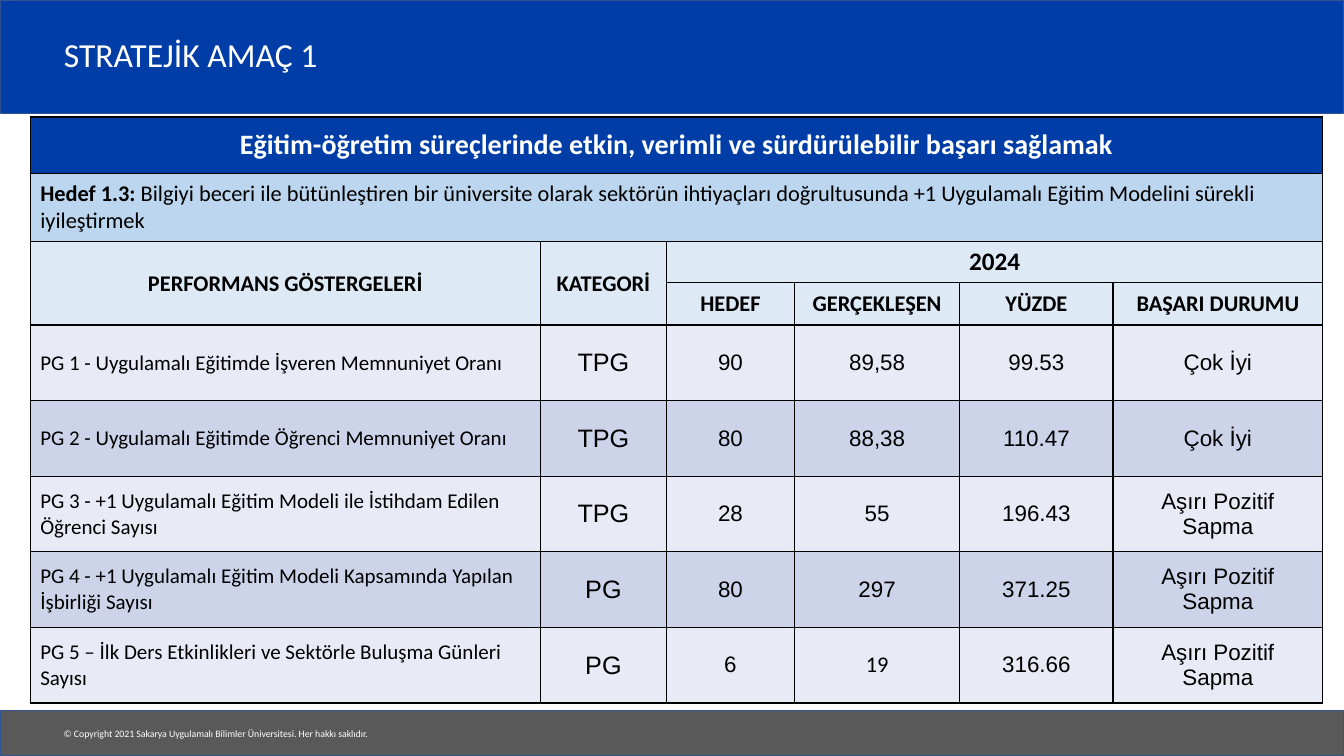
from lxml.etree import SubElement
from pptx import Presentation
from pptx.dml.color import RGBColor
from pptx.enum.shapes import MSO_SHAPE
from pptx.enum.text import MSO_ANCHOR, PP_ALIGN
from pptx.oxml.ns import qn
from pptx.util import Inches, Pt

WIDTH, HEIGHT = 13.33, 7.5
NAVY, GREY, OUTLINE = "003DA6", "595959", "31538F"
WHITE, BLACK = "FFFFFF", "000000"
GOAL_FILL, HEAD_FILL = "BBD6EE", "DDEAF6"
BANDS = ("E8EBF5", "CDD4EA")
COLUMNS = (5.06, 1.25, 1.27, 1.64, 1.52, 2.08)
ROWS = (0.56, 0.68, 0.4, 0.42) + (0.75,) * 5
MEASURES = ("HEDEF", "GERÇEKLEŞEN", "YÜZDE", "BAŞARI DURUMU")
INDICATORS = (
    ("PG 1 - Uygulamalı Eğitimde İşveren Memnuniyet Oranı",
     "TPG", "90", "89,58", "99.53", "Çok İyi"),
    ("PG 2 - Uygulamalı Eğitimde Öğrenci Memnuniyet Oranı",
     "TPG", "80", "88,38", "110.47", "Çok İyi"),
    ("PG 3 - +1 Uygulamalı Eğitim Modeli ile İstihdam Edilen Öğrenci Sayısı",
     "TPG", "28", "55", "196.43", "Aşırı Pozitif Sapma"),
    ("PG 4 - +1 Uygulamalı Eğitim Modeli Kapsamında Yapılan İşbirliği Sayısı",
     "PG", "80", "297", "371.25", "Aşırı Pozitif Sapma"),
    ("PG 5 – İlk Ders Etkinlikleri ve Sektörle Buluşma Günleri Sayısı",
     "PG", "6", "19", "316.66", "Aşırı Pozitif Sapma"),
)


def color(code):
    """Turn a hex string into a colour."""
    return RGBColor.from_string(code)


def write(frame, text, size=16, ink=BLACK, bold=False, font="Calibri",
          align=PP_ALIGN.LEFT, lead=""):
    """Write one paragraph, with an optional bold lead-in."""
    para = frame.paragraphs[0]
    para.alignment = align
    for words, heavy in ((lead, True), (text, bold)):
        if words:
            span = para.add_run()
            span.text = words
            span.font.name = font
            span.font.size = Pt(size)
            span.font.bold = heavy
            span.font.color.rgb = color(ink)


def add_bar(page, top, height, fill):
    """Add a full-width bar at shares of the slide height."""
    bar = page.shapes.add_shape(
        MSO_SHAPE.RECTANGLE, 0, Inches(top * HEIGHT),
        Inches(WIDTH), Inches(height * HEIGHT))
    bar.shadow.inherit = False
    bar.fill.solid()
    bar.fill.fore_color.rgb = color(fill)
    bar.line.color.rgb = color(OUTLINE)
    bar.line.width = Pt(1)


def add_title(page, text):
    """Format the title placeholder and bring it above the bar."""
    title = page.shapes.title
    title.left, title.top = Inches(0.04 * WIDTH), Inches(0.025 * HEIGHT)
    title.width, title.height = Inches(0.83 * WIDTH), Inches(0.1 * HEIGHT)
    title.text_frame.vertical_anchor = MSO_ANCHOR.MIDDLE
    write(title.text_frame, text, size=24, ink=WHITE)
    title.text_frame.paragraphs[0].line_spacing = 0.9
    page.shapes.element.append(title.element)


def add_copyright(page, text):
    """Add the copyright line on the bottom bar."""
    box = page.shapes.add_textbox(
        Inches(0.04 * WIDTH), Inches(0.956 * HEIGHT),
        Inches(0.25 * WIDTH), Inches(0.03 * HEIGHT))
    box.text_frame.word_wrap = True
    write(box.text_frame, text, size=7, ink=WHITE)


def dress(cell, fill):
    """Give a cell thin black borders, a fill and centred height."""
    properties = cell._tc.get_or_add_tcPr()
    for side in ("a:lnL", "a:lnR", "a:lnT", "a:lnB"):
        border = SubElement(properties, qn(side), w=str(Pt(1)))
        solid = SubElement(border, qn("a:solidFill"))
        SubElement(solid, qn("a:srgbClr"), val=BLACK)
    cell.fill.solid()
    cell.fill.fore_color.rgb = color(fill)
    cell.vertical_anchor = MSO_ANCHOR.MIDDLE


def add_grid(page):
    """Add the table with its bordered cells and merged headings."""
    table = page.shapes.add_table(
        len(ROWS), len(COLUMNS), Inches(0.3), Inches(1.16),
        Inches(sum(COLUMNS)), Inches(sum(ROWS))).table
    table.first_row = table.horz_banding = False
    for column, width in zip(table.columns, COLUMNS):
        column.width = Inches(width)
    fills = (NAVY, GOAL_FILL, HEAD_FILL, HEAD_FILL)
    for index, (row, height) in enumerate(zip(table.rows, ROWS)):
        row.height = Inches(height)
        for cell in row.cells:
            dress(cell, fills[index] if index < len(fills) else BANDS[index % 2])
    for first, last in (((0, 0), (0, 5)), ((1, 0), (1, 5)), ((2, 0), (3, 0)),
                        ((2, 1), (3, 1)), ((2, 2), (2, 5))):
        table.cell(*first).merge(table.cell(*last))
    return table


def fill_headings(table):
    """Write the aim, the goal and the column headings."""
    write(table.cell(0, 0).text_frame,
          "Eğitim-öğretim süreçlerinde etkin, verimli ve sürdürülebilir başarı sağlamak",
          size=20, ink=WHITE, bold=True, align=PP_ALIGN.CENTER)
    write(table.cell(1, 0).text_frame,
          "Bilgiyi beceri ile bütünleştiren bir üniversite olarak sektörün ihtiyaçları "
          "doğrultusunda +1 Uygulamalı Eğitim Modelini sürekli iyileştirmek",
          lead="Hedef 1.3: ")
    headings = [(2, 0, "PERFORMANS GÖSTERGELERİ", 16), (2, 1, "KATEGORİ", 16),
                (2, 2, "2024", 18)]
    headings += [(3, column, text, 16) for column, text in enumerate(MEASURES, 2)]
    for row, column, text, size in headings:
        write(table.cell(row, column).text_frame, text, size=size, bold=True,
              align=PP_ALIGN.CENTER)


def fill_indicators(table):
    """Write one row for each performance indicator."""
    for row, (name, category, *values) in enumerate(INDICATORS, 4):
        write(table.cell(row, 0).text_frame, name, size=15)
        write(table.cell(row, 1).text_frame, category, size=18, font="Arial",
              align=PP_ALIGN.CENTER)
        for column, value in enumerate(values, 2):
            write(table.cell(row, column).text_frame, value,
                  font="Calibri" if value == "19" else "Arial",
                  align=PP_ALIGN.CENTER)


def main():
    """Build the slide and save it."""
    deck = Presentation()
    deck.slide_width, deck.slide_height = Inches(WIDTH), Inches(HEIGHT)
    page = deck.slides.add_slide(deck.slide_layouts[5])
    add_bar(page, 0, 0.15, NAVY)
    add_bar(page, 0.94, 0.06, GREY)
    add_copyright(
        page, "© Copyright 2021 Sakarya Uygulamalı Bilimler Üniversitesi. Her hakkı saklıdır.")
    add_title(page, "STRATEJİK AMAÇ 1")
    table = add_grid(page)
    fill_headings(table)
    fill_indicators(table)
    deck.save("out.pptx")


if __name__ == "__main__":
    main()
